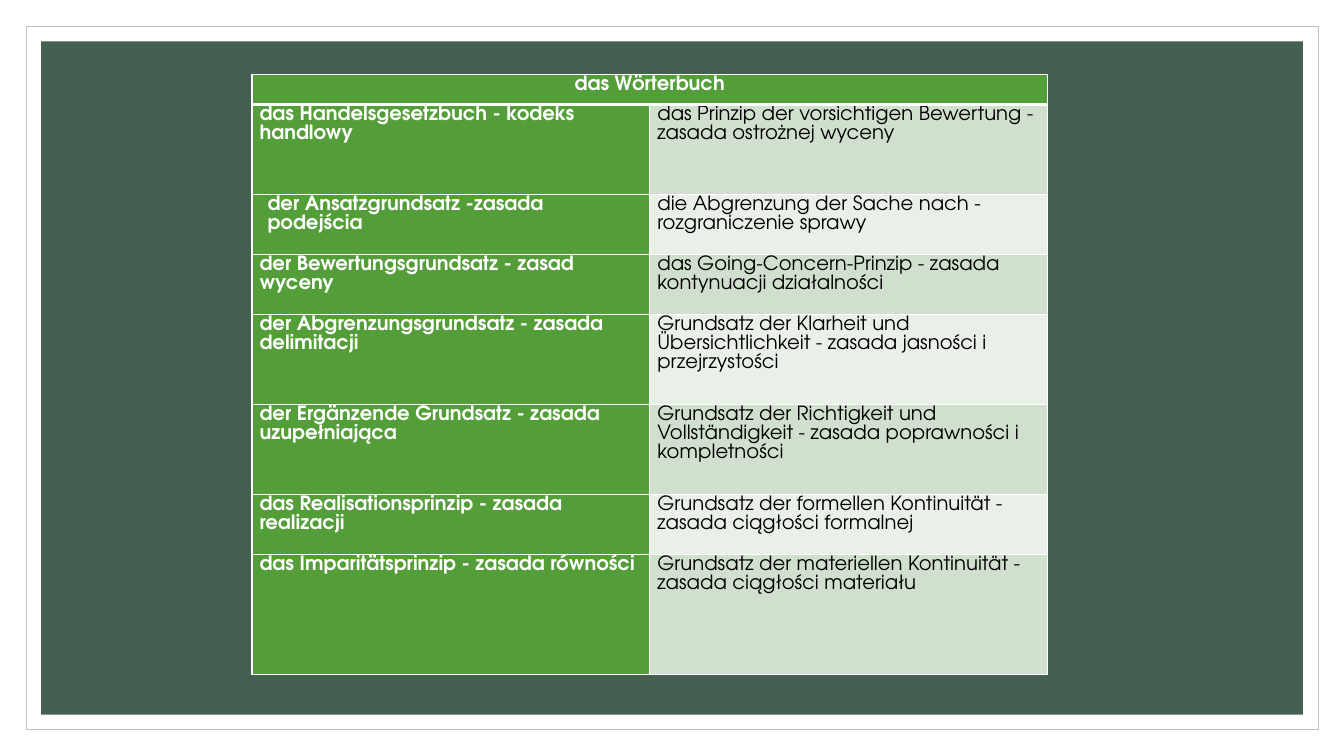
from dataclasses import dataclass

from pptx import Presentation
from pptx.dml.color import RGBColor
from pptx.enum.shapes import MSO_SHAPE
from pptx.enum.text import PP_ALIGN
from pptx.oxml import parse_xml
from pptx.oxml.ns import nsdecls
from pptx.slide import Slide
from pptx.table import _Cell
from pptx.util import Pt

COLORS = {
    "white": "FFFFFF",
    "black": "000000",
    "frame": "BFBFBF",
    "panel": "455F51",
    "green": "549E39",
    "band_dark": "D1DFCE",
    "band_light": "E9F0E8",
}
FONT = "TeX Gyre Adventor"
ROW_UNIT = 21.43
COLUMN_WIDTH = 284.2
HEADING = "das Wörterbuch"


@dataclass
class Panel:
    left: float
    top: float
    width: float
    height: float
    fill: str
    line: str = ""


@dataclass
class Entry:
    left: str
    right: str
    units: int
    indent: float = 0


PANELS = [
    Panel(18.9, 18.9, 923, 502.2, "white", "frame"),
    Panel(29.3, 29.5, 901.4, 481, "panel"),
]

ENTRIES = [
    Entry("das Handelsgesetzbuch - kodeks handlowy",
          "das Prinzip der vorsichtigen Bewertung - zasada ostrożnej wyceny", 3),
    Entry("der Ansatzgrundsatz -zasada podejścia",
          "die Abgrenzung der Sache nach - rozgraniczenie sprawy", 2, indent=5.7),
    Entry("der Bewertungsgrundsatz - zasad wyceny",
          "das Going-Concern-Prinzip - zasada kontynuacji działalności", 2),
    Entry("der Abgrenzungsgrundsatz - zasada delimitacji",
          "Grundsatz der Klarheit und Übersichtlichkeit - zasada jasności i przejrzystości", 3),
    Entry("der Ergänzende Grundsatz - zasada uzupełniająca",
          "Grundsatz der Richtigkeit und Vollständigkeit - zasada poprawności i kompletności", 3),
    Entry("das Realisationsprinzip - zasada realizacji",
          "Grundsatz der formellen Kontinuität - zasada ciągłości formalnej", 2),
    Entry("das Imparitätsprinzip - zasada równości",
          "Grundsatz der materiellen Kontinuität - zasada ciągłości materiału", 4),
]


def rgb(name: str) -> RGBColor:
    return RGBColor.from_string(COLORS[name])


def draw_panel(s: Slide, panel: Panel) -> None:
    sp = s.shapes.add_shape(MSO_SHAPE.RECTANGLE, Pt(panel.left), Pt(panel.top),
                            Pt(panel.width), Pt(panel.height))
    sp.shadow.inherit = False
    sp.fill.solid()
    sp.fill.fore_color.rgb = rgb(panel.fill)
    if panel.line:
        sp.line.color.rgb = rgb(panel.line)
        sp.line.width = Pt(0.5)
    else:
        sp.line.fill.background()


def set_borders(cell: _Cell, top: float = 1, bottom: float = 1) -> None:
    """Give the cell white borders, with widths in points."""
    tcPr = cell._tc.get_or_add_tcPr()
    widths = {"lnL": 1, "lnR": 1, "lnT": top, "lnB": bottom}
    for i, (tag, width) in enumerate(widths.items()):
        tcPr.insert(i, parse_xml(
            f'<a:{tag} {nsdecls("a")} w="{Pt(width)}"><a:solidFill>'
            f'<a:srgbClr val="{COLORS["white"]}"/></a:solidFill></a:{tag}>'))


def fill_cell(cell: _Cell, text: str, fill: str, color: str, bold: bool,
              indent: float = 0, align: PP_ALIGN = PP_ALIGN.LEFT) -> None:
    margins = {"margin_left": 5.4, "margin_right": 5.4, "margin_top": 0, "margin_bottom": 0}
    for name, value in margins.items():
        setattr(cell, name, Pt(value))
    cell.fill.solid()
    cell.fill.fore_color.rgb = rgb(fill)
    p = cell.text_frame.paragraphs[0]
    p.alignment = align
    p.line_spacing = 1.07
    if indent:
        p._p.get_or_add_pPr().set("marL", str(Pt(indent)))
    r = p.add_run()
    r.text = text
    for name, value in {"name": FONT, "size": Pt(14), "bold": bold}.items():
        setattr(r.font, name, value)
    r.font.color.rgb = rgb(color)


def draw_dictionary(s: Slide) -> None:
    units = [1] + [entry.units for entry in ENTRIES]
    table = s.shapes.add_table(len(units), 2, Pt(180), Pt(53.2), Pt(2 * COLUMN_WIDTH),
                               Pt(sum(units) * ROW_UNIT)).table
    for column in table.columns:
        column.width = Pt(COLUMN_WIDTH)
    for row, count in zip(table.rows, units):
        row.height = Pt(count * ROW_UNIT)

    heading = table.cell(0, 0)
    heading.merge(table.cell(0, 1))
    fill_cell(heading, HEADING, "green", "white", True, align=PP_ALIGN.CENTER)
    for i, entry in enumerate(ENTRIES, start=1):
        band = "band_dark" if i % 2 else "band_light"
        fill_cell(table.cell(i, 0), entry.left, "green", "white", True, entry.indent)
        fill_cell(table.cell(i, 1), entry.right, band, "black", False)

    for i, row in enumerate(table.rows):
        for cell in row.cells:
            set_borders(cell, top=3 if i == 1 else 1, bottom=3 if i == 0 else 1)


def main() -> None:
    prs = Presentation()
    prs.slide_width, prs.slide_height = Pt(960), Pt(540)
    s = prs.slides.add_slide(prs.slide_layouts[6])
    for panel in PANELS:
        draw_panel(s, panel)
    draw_dictionary(s)
    prs.save("out.pptx")


if __name__ == "__main__":
    main()
